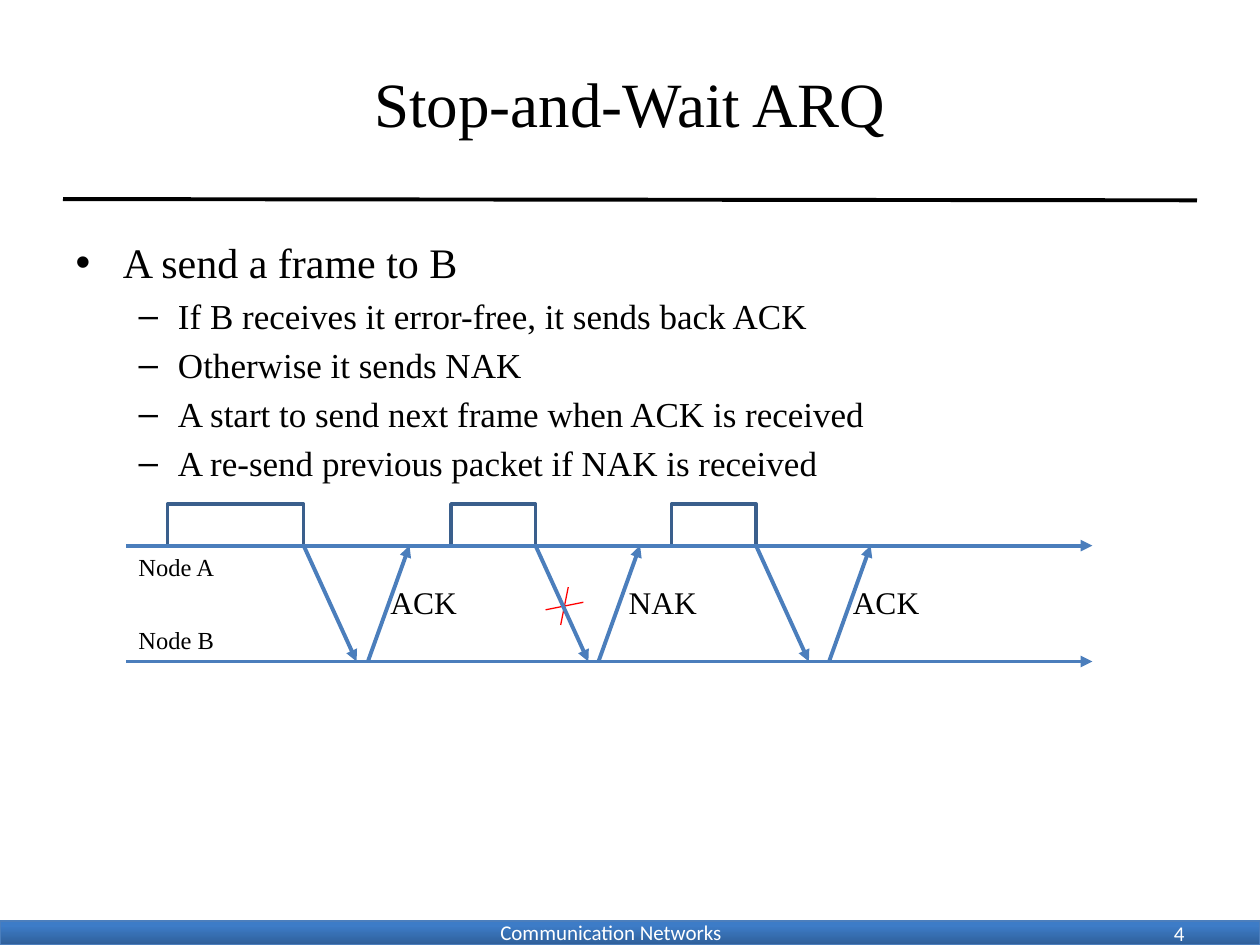
from lxml import etree
from pptx import Presentation
from pptx import util as u
from pptx.dml.color import RGBColor
from pptx.enum import shapes, text
from pptx.oxml.ns import qn

BLACK = RGBColor(0x00, 0x00, 0x00)
WHITE = RGBColor(0xFF, 0xFF, 0xFF)
RED = RGBColor(0xFF, 0x00, 0x00)
BLUE = RGBColor(0x4B, 0x7E, 0xBC)
FRAME_BLUE = RGBColor(0x3A, 0x5F, 0x8C)
BAR_DARK = RGBColor(0x2F, 0x5F, 0x99)
BAR_LIGHT = RGBColor(0x3D, 0x7C, 0xC7)
SERIF, SANS = "Times New Roman", "Calibri"

A_Y, B_Y = 4.33, 5.25  # time lines of the two nodes
FRAME_H = 0.33
SEND_DX, REPLY_DX = 0.42, 0.33
# frame left, frame width, reply start, label left, label width, label
EXCHANGES = [
    (1.33, 1.08, 2.92, 3.0, 0.73, "ACK"),
    (3.58, 0.67, 4.75, 4.89, 0.75, "NAK"),
    (5.33, 0.67, 6.58, 6.67, 0.73, "ACK"),
]
BULLETS = [
    (0, "A send a frame to B"),
    (1, "If B receives it error-free, it sends back ACK"),
    (1, "Otherwise it sends NAK"),
    (1, "A start to send next frame when ACK is received"),
    (1, "A re-send previous packet if NAK is received"),
]


class SlideBuilder:
    def __init__(self, slide):
        self.s = slide

    def place(self, sp, x, y, w, h):
        sp.left, sp.top, sp.width, sp.height = map(u.Inches, (x, y, w, h))

    def style(self, p, size, font=SERIF, color=BLACK):
        for r in p.runs:
            r.font.size = u.Pt(size)
            r.font.name = font
            r.font.color.rgb = color

    def title(self, words, *box):
        sp = self.s.shapes.title
        self.place(sp, *box)
        tf = sp.text_frame
        tf.text = words
        tf.auto_size = text.MSO_AUTO_SIZE.NONE
        tf.vertical_anchor = text.MSO_ANCHOR.MIDDLE
        tf.paragraphs[0].alignment = text.PP_ALIGN.CENTER
        self.style(tf.paragraphs[0], 36)

    def body(self, items, *box):
        sp = self.s.placeholders[1]
        self.place(sp, *box)
        tf = sp.text_frame
        tf.text = "\n".join(words for _, words in items)
        tf.auto_size = text.MSO_AUTO_SIZE.NONE
        for p, (level, _) in zip(tf.paragraphs, items):
            p.level = level
            self.style(p, 20 if level else 24)

    def label(self, words, x, y, w, h, size, font=SERIF, color=BLACK,
              align=text.PP_ALIGN.LEFT, wrap=False):
        tf = self.s.shapes.add_textbox(*map(u.Inches, (x, y, w, h))).text_frame
        tf.word_wrap = wrap
        tf.text = words
        tf.paragraphs[0].alignment = align
        self.style(tf.paragraphs[0], size, font, color)

    def rect(self, x, y, w, h, line, width):
        sp = self.s.shapes.add_shape(shapes.MSO_SHAPE.RECTANGLE,
                                     *map(u.Inches, (x, y, w, h)))
        sp.shadow.inherit = False
        sp.fill.solid()
        sp.fill.fore_color.rgb = WHITE
        sp.line.color.rgb = line
        sp.line.width = u.Pt(width)
        return sp

    def bar(self, *box):
        fill = self.rect(*box, BLUE, 0.75).fill
        fill.gradient()
        fill.gradient_angle = 90
        stops = ((0, BAR_DARK), (0.8, BAR_LIGHT))
        for stop, (position, color) in zip(fill.gradient_stops, stops):
            stop.position = position
            stop.color.rgb = color

    def line(self, x1, y1, x2, y2, color=BLUE, width=2.25, arrow=False):
        c = self.s.shapes.add_connector(shapes.MSO_CONNECTOR.STRAIGHT,
                                        *map(u.Inches, (x1, y1, x2, y2)))
        c.line.color.rgb = color
        c.line.width = u.Pt(width)
        if arrow:
            ln = c.line._get_or_add_ln()
            etree.SubElement(ln, qn("a:tailEnd"), type="triangle")
        etree.SubElement(c._element.spPr, qn("a:effectLst"))


def main():
    prs = Presentation()
    prs.slide_width, prs.slide_height = u.Inches(10), u.Inches(7.5)
    b = SlideBuilder(prs.slides.add_slide(prs.slide_layouts[1]))

    b.bar(0, 7.31, 10, 0.19)
    b.line(0.5, 1.58, 9.5, 1.59, BLACK)
    b.label("Communication Networks", 3.7, 7.25, 2.3, 0.3, 12, SANS, WHITE,
            text.PP_ALIGN.CENTER, wrap=True)
    b.label("4", 7.17, 7.26, 2.33, 0.2, 12, SANS, WHITE,
            text.PP_ALIGN.RIGHT, wrap=True)
    b.title("Stop-and-Wait ARQ", 0.5, 0.3, 9, 1.03)
    b.body(BULLETS, 0.5, 1.83, 9, 2)

    for x, w, *_ in EXCHANGES:
        b.rect(x, A_Y - FRAME_H, w, FRAME_H, FRAME_BLUE, 2)
    for name, y, label_y in (("Node A", A_Y, A_Y), ("Node B", B_Y, 4.91)):
        b.line(1, y, 8.67, y, arrow=True)
        b.label(name, 1, label_y, 0.81, 0.34, 14)

    # cross marking the frame that arrives with errors
    b.line(4.51, 4.66, 4.45, 4.96, RED, 0.75)
    b.line(4.63, 4.78, 4.33, 4.84, RED, 0.75)

    for x, w, reply_x, label_x, label_w, reply in EXCHANGES:
        b.line(x + w, A_Y, x + w + SEND_DX, B_Y, arrow=True)
        b.line(reply_x, B_Y, reply_x + REPLY_DX, A_Y, arrow=True)
        b.label(reply, label_x, 4.58, label_w, 0.4, 18)

    prs.save("out.pptx")


if __name__ == "__main__":
    main()
